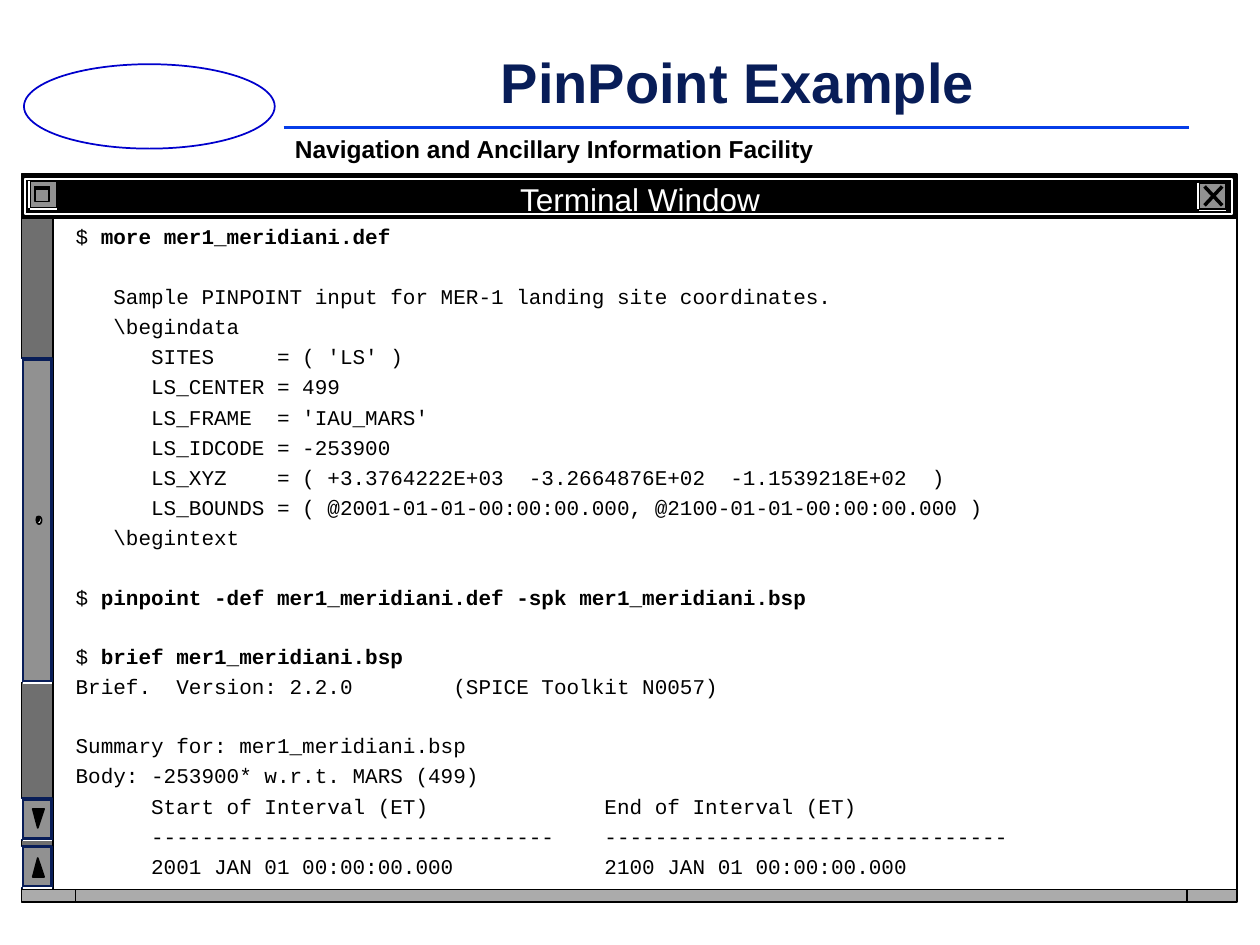
import dataclasses

import lxml.etree
import pptx
import pptx.dml.color
import pptx.enum.shapes
import pptx.enum.text
import pptx.oxml.ns
import pptx.util

Inches = pptx.util.Inches
Pt = pptx.util.Pt
RGBColor = pptx.dml.color.RGBColor
Shape = pptx.enum.shapes.MSO_SHAPE
Align = pptx.enum.text.PP_ALIGN

BLACK = RGBColor(0x00, 0x00, 0x00)
WHITE = RGBColor(0xFF, 0xFF, 0xFF)
NAVY = RGBColor(0x08, 0x1D, 0x58)
RULE_BLUE = RGBColor(0x06, 0x3D, 0xE8)
EMBLEM_BLUE = RGBColor(0x00, 0x00, 0xCC)
TROUGH_GRAY = RGBColor(0x6F, 0x6F, 0x6F)
BUTTON_GRAY = RGBColor(0x91, 0x91, 0x91)
FRAME_GRAY = RGBColor(0xAB, 0xAB, 0xAB)

SESSION = r"""$ more mer1_meridiani.def

   Sample PINPOINT input for MER-1 landing site coordinates.
   \begindata
      SITES     = ( 'LS' )
      LS_CENTER = 499
      LS_FRAME  = 'IAU_MARS'
      LS_IDCODE = -253900
      LS_XYZ    = ( +3.3764222E+03  -3.2664876E+02  -1.1539218E+02  )
      LS_BOUNDS = ( @2001-01-01-00:00:00.000, @2100-01-01-00:00:00.000 )
   \begintext

$ pinpoint -def mer1_meridiani.def -spk mer1_meridiani.bsp

$ brief mer1_meridiani.bsp
Brief.  Version: 2.2.0        (SPICE Toolkit N0057)

Summary for: mer1_meridiani.bsp
Body: -253900* w.r.t. MARS (499)
      Start of Interval (ET)              End of Interval (ET)
      --------------------------------    --------------------------------
      2001 JAN 01 00:00:00.000            2100 JAN 01 00:00:00.000"""
PROMPT = "$ "
LINE_GAP = 4.3
BLANK_LINE = 16.6


@dataclasses.dataclass
class Area:
    left: float
    top: float
    width: float
    height: float

    def inner(self, left, top, width, height):
        return Area(self.left + left, self.top + top, width, height)

    def lengths(self):
        return [Inches(n) for n in (self.left, self.top, self.width, self.height)]


def paint(shape, fill, line, weight):
    shape.shadow.inherit = False
    if fill is None:
        shape.fill.background()
    else:
        shape.fill.solid()
        shape.fill.fore_color.rgb = fill
    shape.line.color.rgb = line
    shape.line.width = Pt(weight)


def add_block(page, area, fill=None, line=BLACK, weight=1, kind=Shape.RECTANGLE):
    paint(page.shapes.add_shape(kind, *area.lengths()), fill, line, weight)


def add_line(page, x1, y1, x2, y2, color=WHITE, weight=1):
    line = page.shapes.add_connector(
        pptx.enum.shapes.MSO_CONNECTOR.STRAIGHT, *[Inches(n) for n in (x1, y1, x2, y2)])
    line.line.color.rgb = color
    line.line.width = Pt(weight)
    lxml.etree.SubElement(line.element.spPr, pptx.oxml.ns.qn("a:effectLst"))


def write_text(para, text, size, font="Arial", color=BLACK, bold=False,
               align=Align.LEFT, spacing=0.9):
    para.alignment = align
    para.line_spacing = spacing
    span = para.add_run()
    span.text = text
    span.font.name = font
    span.font.size = Pt(size)
    span.font.bold = bold
    span.font.color.rgb = color


def set_frame(box, margin_x, margin_y):
    frame = box.text_frame
    frame.margin_left = frame.margin_right = Inches(margin_x)
    frame.margin_top = frame.margin_bottom = Inches(margin_y)
    frame.word_wrap = False
    frame.auto_size = pptx.enum.text.MSO_AUTO_SIZE.NONE
    frame.vertical_anchor = pptx.enum.text.MSO_ANCHOR.TOP
    return frame


def place(box, area):
    box.left, box.top, box.width, box.height = area.lengths()
    box.element.getparent().append(box.element)


def add_label(page, area, text, margin_x, margin_y, **style):
    box = page.shapes.add_textbox(*area.lengths())
    write_text(set_frame(box, margin_x, margin_y).paragraphs[0], text, **style)


def add_header(page, area):
    add_block(page, area.inner(0, 0.25, 1.99, 0.67), line=EMBLEM_BLUE, kind=Shape.OVAL)
    rule_y = area.top + 0.75
    add_line(page, area.left + 2.06, rule_y, area.left + area.width, rule_y, RULE_BLUE, 1.5)
    add_label(page, area.inner(2.08, 0.8, 4.29, 0.27),
              "Navigation and Ancillary Information Facility", 0.07, 0.03, size=14, bold=True)
    title = page.shapes.title
    place(title, area.inner(3.7, 0.16, 3.93, 0.54))
    write_text(set_frame(title, 0.07, 0.03).paragraphs[0], "PinPoint Example",
               size=32, color=NAVY, bold=True, align=Align.CENTER, spacing=0.87)


def add_button(page, area, line=BLACK, weight=1):
    add_block(page, area, BUTTON_GRAY, line, weight)
    edge = area.left - 0.01
    bottom = area.top + area.height
    add_line(page, edge, area.top, edge, bottom)
    add_line(page, area.left, bottom + 0.01, area.left + area.width, bottom + 0.01)


def add_arrow(page, area, base, tip):
    middle, right = area.left + 0.12, area.left + 0.17
    points = [(area.left + 0.08, area.top + base), (right, area.top + base),
              (middle, area.top + tip)]
    corners = [(Inches(x), Inches(y)) for x, y in points]
    builder = page.shapes.build_freeform(*corners[0])
    builder.add_line_segments(corners[1:], close=True)
    paint(builder.convert_to_shape(), BLACK, BLACK, 1)


def add_scroll_bar(page, area):
    add_button(page, area.inner(0, 0, area.width, 2.56), NAVY, 2)
    for size, fill in ((0.04, WHITE), (0.02, BLACK)):
        add_block(page, area.inner(0.11, 1.25, size, size + 0.02), fill, kind=Shape.OVAL)
    for top, base, tip in ((3.87, 0.24, 0.09), (3.49, 0.08, 0.23)):
        button = area.inner(0, top, area.width, 0.32)
        add_button(page, button, NAVY, 2)
        add_arrow(page, button, base, tip)


def add_title_bar(page, area):
    add_block(page, area, BLACK)
    add_block(page, area.inner(0.03, 0.04, area.width - 0.07, 0.28), line=WHITE)
    add_label(page, area.inner(3.86, 0.03, 2.14, 0.38), "Terminal Window", 0.1, 0.05,
              size=18, color=WHITE)
    add_button(page, area.inner(0.07, 0.06, 0.21, 0.21))
    add_block(page, area.inner(0.11, 0.1, 0.11, 0.12))
    add_block(page, area.inner(0.11, 0.1, 0.11, 0.02), BLACK)
    close = area.inner(9.35, 0.07, 0.21, 0.21)
    add_button(page, close)
    left, right = close.left + 0.04, close.left + 0.18
    high, low = close.top + 0.03, close.top + 0.18
    add_line(page, left, high, right, low, BLACK, 2)
    add_line(page, left, low, right, high, BLACK, 2)


def add_session(page, area):
    body = page.placeholders[1]
    place(body, area)
    frame = set_frame(body, 0.1, 0.05)
    para, gap = frame.paragraphs[0], 0
    for number, line in enumerate(SESSION.split("\n")):
        if not line:
            gap += BLANK_LINE
            continue
        if number:
            para = frame.add_paragraph()
        layout = para._p.get_or_add_pPr()
        layout.set("marL", "0")
        layout.set("indent", "0")
        lxml.etree.SubElement(layout, pptx.oxml.ns.qn("a:buNone"))
        para.space_before = Pt(gap)
        command = line.startswith(PROMPT)
        if command:
            write_text(para, PROMPT, size=12, font="Courier New")
        write_text(para, line.removeprefix(PROMPT), size=12, font="Courier New", bold=command)
        gap = LINE_GAP


def add_terminal(page, area):
    add_block(page, area.inner(0, 0.35, area.width, 5.42), TROUGH_GRAY)
    add_block(page, area.inner(0.25, 0.22, area.width - 0.25, 5.55), WHITE)
    add_block(page, area.inner(0, 5.68, area.width, 0.1), FRAME_GRAY)
    add_block(page, area.inner(0.43, 5.68, 8.82, 0.1))
    add_title_bar(page, area.inner(0, 0, area.width, 0.35))
    add_scroll_bar(page, area.inner(0.01, 1.47, 0.23, 4.2))
    add_session(page, area.inner(0.33, 0.37, 8.49, 4.91))


def main():
    deck = pptx.Presentation()
    deck.slide_width, deck.slide_height = Inches(10), Inches(7.5)
    page = deck.slides.add_slide(deck.slide_layouts[1])
    page.background.fill.solid()
    page.background.fill.fore_color.rgb = WHITE
    add_header(page, Area(0.19, 0.26, 9.25, 1.07))
    add_terminal(page, Area(0.17, 1.38, 9.65, 5.78))
    deck.save("out.pptx")


if __name__ == "__main__":
    main()
